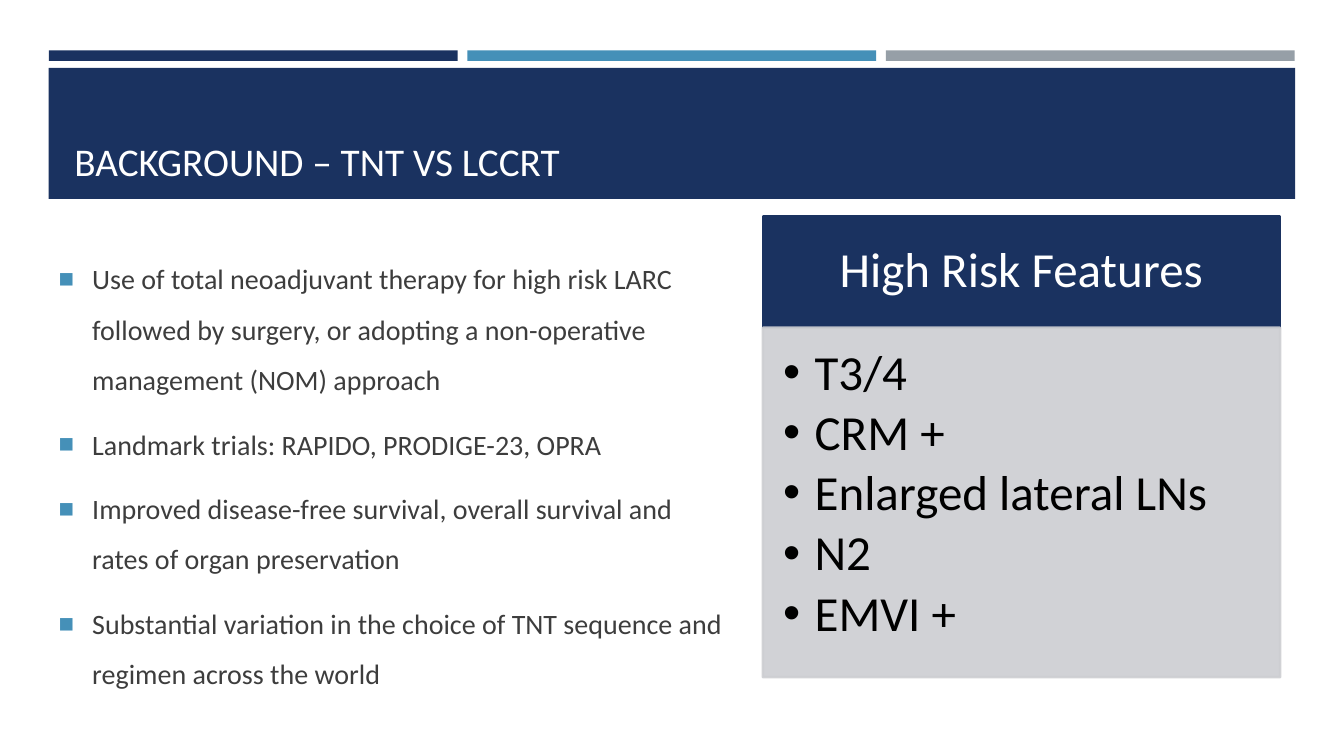
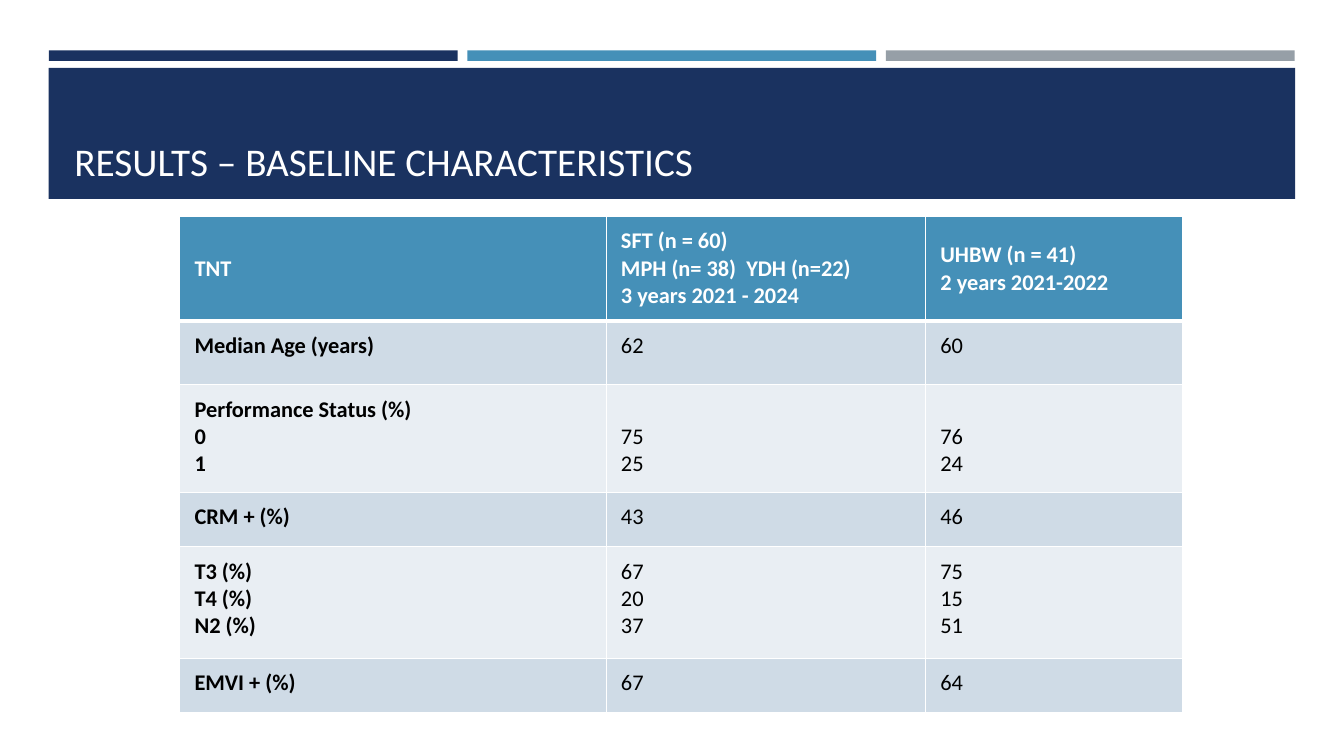
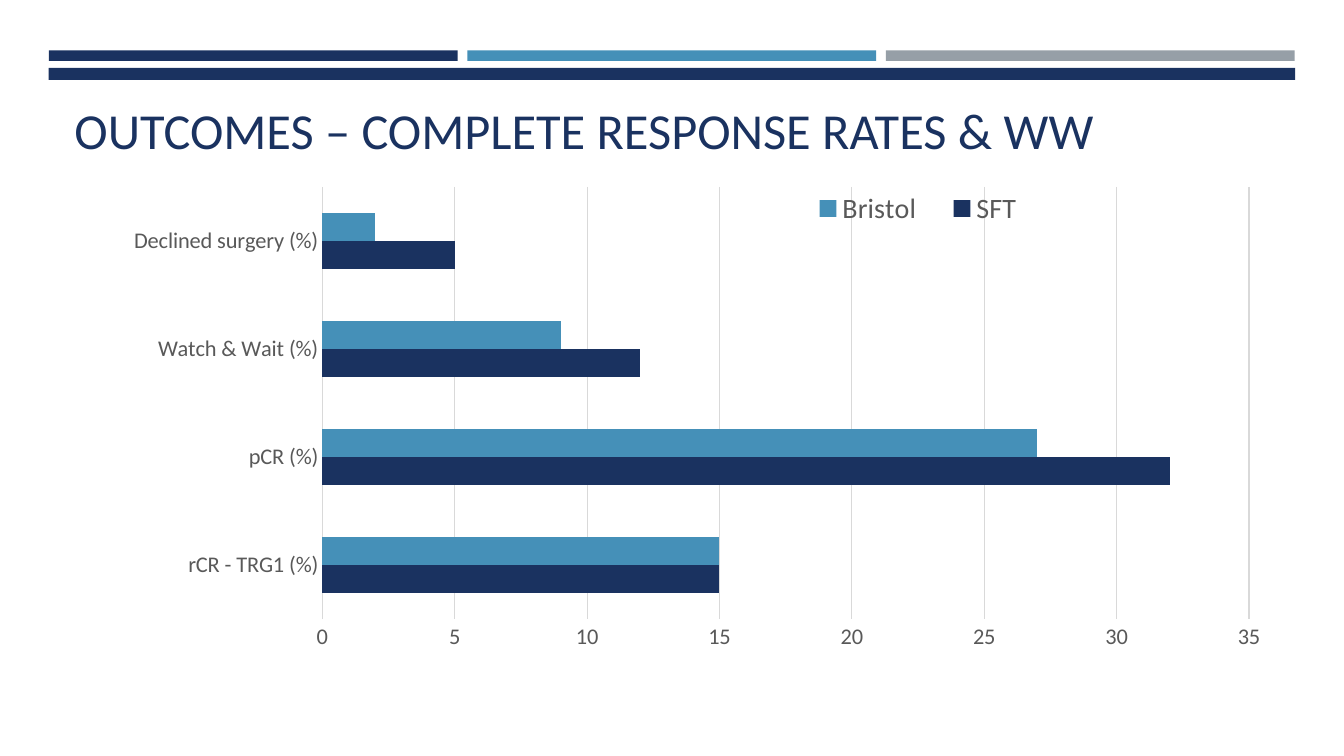
from lxml import etree
from pptx import Presentation
from pptx.chart.data import CategoryChartData
from pptx.dml.color import RGBColor
from pptx.enum.chart import XL_CHART_TYPE, XL_LEGEND_POSITION, XL_TICK_MARK
from pptx.enum.shapes import MSO_SHAPE
from pptx.enum.text import MSO_ANCHOR, PP_ALIGN
from pptx.oxml.ns import qn
from pptx.util import Pt

RECT = MSO_SHAPE.RECTANGLE
TOP, MIDDLE, BOTTOM = MSO_ANCHOR.TOP, MSO_ANCHOR.MIDDLE, MSO_ANCHOR.BOTTOM
LEFT, CENTER = PP_ALIGN.LEFT, PP_ALIGN.CENTER
BAR_CLUSTERED = XL_CHART_TYPE.BAR_CLUSTERED
LEGEND_BOTTOM = XL_LEGEND_POSITION.BOTTOM
NO_TICK = XL_TICK_MARK.NONE

FONT = "Calibri"
COLORS = {
    "navy": "1A3260", "blue": "4590B8", "gray": "969FA7", "white": "FFFFFF",
    "black": "000000", "body": "3D3D3D", "panel": "CDCED2",
    "row_dark": "CFDBE6", "row_light": "E9EEF3",
    "axis_text": "595959", "grid": "D9D9D9",
}


def rgb(name):
    return RGBColor.from_string(COLORS[name])


class Deck:
    """Holds the shared style and the slide being built."""

    def __init__(self):
        self.prs = Presentation()
        self.prs.slide_width, self.prs.slide_height = Pt(960), Pt(540)
        self.slide = None

    def new_slide(self, title, size=28, color="white", band_height=93.6,
                  title_box=(46, 55.4, 868, 80)):
        self.slide = self.prs.slides.add_slide(self.prs.slide_layouts[5])
        # Three accent strips above the title band
        for i, strip_color in enumerate(("navy", "blue", "gray")):
            self.rect((35 + i * 298.9, 36, 291.9, 7.5), strip_color)
        self.rect((34.8, 48.5, 890.4, band_height), "navy")
        # Title goes in front of the band
        heading = self.slide.shapes.title
        self.slide.shapes._spTree.append(heading._element)
        heading.left, heading.top, heading.width, heading.height = map(Pt, title_box)
        self.add_lines(heading.text_frame, [title], size, color, anchor=BOTTOM)

    def rect(self, box, color, line_width=0, opacity=100):
        shape = self.slide.shapes.add_shape(RECT, *map(Pt, box))
        shape.shadow.inherit = False
        shape.fill.solid()
        shape.fill.fore_color.rgb = rgb(color)
        if line_width:
            shape.line.color.rgb = rgb(color)
            shape.line.width = Pt(line_width)
        else:
            shape.line.fill.background()
        if opacity < 100:
            for tone in shape._element.spPr.iter(qn("a:srgbClr")):
                etree.SubElement(tone, qn("a:alpha"), val=str(opacity * 1000))
        return shape

    def text(self, box, lines, size, color, **style):
        frame = self.slide.shapes.add_textbox(*map(Pt, box)).text_frame
        self.add_lines(frame, lines, size, color, **style)

    def add_lines(self, frame, lines, size, color, bold=False, align=LEFT, anchor=None,
                  insets=None, spacing=1.0, before=0, after=0, bullet=None):
        frame.word_wrap = True
        if anchor is not None:
            frame.vertical_anchor = anchor
        if insets:
            (frame.margin_left, frame.margin_top,
             frame.margin_right, frame.margin_bottom) = map(Pt, insets)
        for i, line in enumerate(lines):
            paragraph = frame.paragraphs[0] if i == 0 else frame.add_paragraph()
            paragraph.alignment = align
            paragraph.line_spacing = spacing
            paragraph.space_before, paragraph.space_after = Pt(before), Pt(after)
            if bullet:
                self.bullet(paragraph, *bullet)
            run = paragraph.add_run()
            run.text = line
            run.font.name, run.font.size, run.font.bold = FONT, Pt(size), bold
            run.font.color.rgb = rgb(color)

    def bullet(self, paragraph, char, color, percent, indent):
        props = paragraph._p.get_or_add_pPr()
        props.set("marL", str(Pt(indent)))
        props.set("indent", str(-Pt(indent)))
        tone = etree.SubElement(props, qn("a:buClr"))
        etree.SubElement(tone, qn("a:srgbClr"), val=COLORS[color])
        etree.SubElement(props, qn("a:buSzPct"), val=str(percent * 1000))
        etree.SubElement(props, qn("a:buFont"), typeface="Arial")
        etree.SubElement(props, qn("a:buChar"), char=char)

    def table(self, box, widths, heights, rows, size=16, line_height=19.6):
        grid = self.slide.shapes.add_table(len(rows), len(widths), *map(Pt, box)).table
        grid.horz_banding = False
        for column, width in zip(grid.columns, widths):
            column.width = Pt(width)
        for r, (row, height) in enumerate(zip(rows, heights)):
            grid.rows[r].height = Pt(height)
            header = r == 0
            fill = "blue" if header else ("row_light", "row_dark")[r % 2]
            for c, lines in enumerate(row):
                cell = grid.cell(r, c)
                self.borders(cell, top=3 if r == 1 else 1, bottom=3 if header else 1)
                cell.fill.solid()
                cell.fill.fore_color.rgb = rgb(fill)
                cell.vertical_anchor = MIDDLE if header else TOP
                # Values line up with the last lines of their row label
                missing = 0 if header else len(row[0]) - len(lines)
                cell.margin_left, cell.margin_right = Pt(10.6), Pt(8.6)
                cell.margin_top = Pt(7.9 + missing * line_height)
                cell.margin_bottom = Pt(7.9)
                self.add_lines(cell.text_frame, lines, size,
                               "white" if header else "black", bold=header or c == 0)

    def borders(self, cell, top, bottom):
        props = cell._tc.get_or_add_tcPr()
        for side, width in (("L", 1), ("R", 1), ("T", top), ("B", bottom)):
            edge = etree.SubElement(props, qn("a:ln" + side), w=str(Pt(width)))
            paint = etree.SubElement(edge, qn("a:solidFill"))
            etree.SubElement(paint, qn("a:srgbClr"), val=COLORS["white"])

    def bar_chart(self, box, categories, series, plot_area, legend_area):
        data = CategoryChartData()
        data.categories = categories
        for name, values, _ in series:
            data.add_series(name, values)
        chart = self.slide.shapes.add_chart(BAR_CLUSTERED, *map(Pt, box), data).chart
        chart.has_title = False
        chart.font.name, chart.font.size = FONT, Pt(10)
        # Bars
        plot = chart.plots[0]
        plot.gap_width, plot.overlap, plot.vary_by_categories = 182, 0, False
        for bars, (_, _, color) in zip(plot.series, series):
            bars.format.fill.solid()
            bars.format.fill.fore_color.rgb = rgb(color)
        # Axes
        for axis in (chart.category_axis, chart.value_axis):
            axis.major_tick_mark = axis.minor_tick_mark = NO_TICK
            self.chart_font(axis.tick_labels.font, 16)
        values_axis = chart.value_axis
        values_axis.minimum_scale, values_axis.maximum_scale = 0, 35
        values_axis.major_unit = 5
        values_axis.format.line.fill.background()
        for rule in (chart.category_axis.format.line,
                     values_axis.major_gridlines.format.line):
            rule.color.rgb = rgb("grid")
            rule.width = Pt(0.75)
        # Legend
        chart.has_legend = True
        chart.legend.position = LEGEND_BOTTOM
        chart.legend.include_in_layout = False
        self.chart_font(chart.legend.font, 20)
        area = chart._chartSpace.find(".//" + qn("c:plotArea"))
        self.place(area, 0, plot_area, inner=True)
        self.place(chart.legend._element, 1, legend_area)

    def chart_font(self, font, size):
        font.name, font.size = FONT, Pt(size)
        font.color.rgb = rgb("axis_text")

    def place(self, part, index, fractions, inner=False):
        for old in part.findall(qn("c:layout")):
            part.remove(old)
        layout = etree.Element(qn("c:layout"))
        manual = etree.SubElement(layout, qn("c:manualLayout"))
        if inner:
            etree.SubElement(manual, qn("c:layoutTarget"), val="inner")
        for tag in ("xMode", "yMode"):
            etree.SubElement(manual, qn("c:" + tag), val="edge")
        for tag, value in zip("xywh", fractions):
            etree.SubElement(manual, qn("c:" + tag), val=str(value))
        part.insert(index, layout)


def background(deck):
    deck.new_slide("BACKGROUND – TNT VS LCCRT")
    deck.text(
        (34.8, 153.4, 494.6, 361.4),
        ["Use of total neoadjuvant therapy for high risk LARC followed by surgery, "
         "or adopting a non-operative management (NOM) approach",
         "Landmark trials: RAPIDO, PRODIGE-23, OPRA",
         "Improved disease-free survival, overall survival and rates of organ preservation",
         "Substantial variation in the choice of TNT sequence and regimen across the world"],
        20, "body", anchor=MIDDLE, spacing=1.5, before=4, after=6,
        bullet=("■", "blue", 92, 24))
    # Risk card: heading above list
    card_left, card_width = 545, 369.4
    heading = deck.rect((card_left, 154.8, card_width, 79.2), "navy", 1.75)
    deck.add_lines(heading.text_frame, ["High Risk Features"], 35, "white", align=CENTER,
                   anchor=MIDDLE, insets=(19.4, 11.5, 19.4, 11.5), spacing=0.9)
    features = deck.rect((card_left, 234, card_width, 249.8), "panel", 1.75, opacity=90)
    deck.add_lines(features.text_frame,
                   ["T3/4", "CRM +", "Enlarged lateral LNs", "N2", "EMVI +"], 35, "black",
                   anchor=TOP, insets=(14.4, 14.4, 19.4, 22.3), spacing=0.9, after=5.25,
                   bullet=("•", "black", 100, 22.5))


def baseline(deck):
    deck.new_slide("RESULTS – BASELINE CHARACTERISTICS")
    rows = [
        (["TNT"],
         ["SFT (n = 60)", "MPH (n= 38)  YDH (n=22)", "3 years 2021 - 2024"],
         ["UHBW (n = 41)", "2 years 2021-2022"]),
        (["Median Age (years)"], ["62"], ["60"]),
        (["Performance Status (%)", "0", "1"], ["75", "25"], ["76", "24"]),
        (["CRM + (%)"], ["43"], ["46"]),
        (["T3 (%)", "T4 (%)", "N2 (%)"], ["67", "20", "37"], ["75", "15", "51"]),
        (["EMVI + (%)"], ["67"], ["64"]),
    ]
    deck.table((128.4, 154.4, 716.4, 354.2), (304.6, 228.2, 183.6),
               (75, 45.4, 76.8, 38.9, 79.9, 38.9), rows)


def outcomes(deck):
    deck.new_slide("OUTCOMES – COMPLETE RESPONSE RATES & WW", size=36, color="navy",
                   band_height=8.6, title_box=(46, 56.9, 865.4, 60.5))
    deck.bar_chart(
        (49.7, 118.1, 859.7, 385.9),
        ["rCR - TRG1 (%)", "pCR (%)", "Watch & Wait (%)", "Declined surgery (%)"],
        [("SFT", (15, 32, 12, 5), "navy"), ("Bristol", (15, 27, 9, 2), "blue")],
        plot_area=(0.21, 0.04, 0.77, 0.8), legend_area=(0.6, 0.03, 0.21, 0.1))


def main():
    deck = Deck()
    background(deck)
    baseline(deck)
    outcomes(deck)
    deck.prs.save("out.pptx")


if __name__ == "__main__":
    main()
